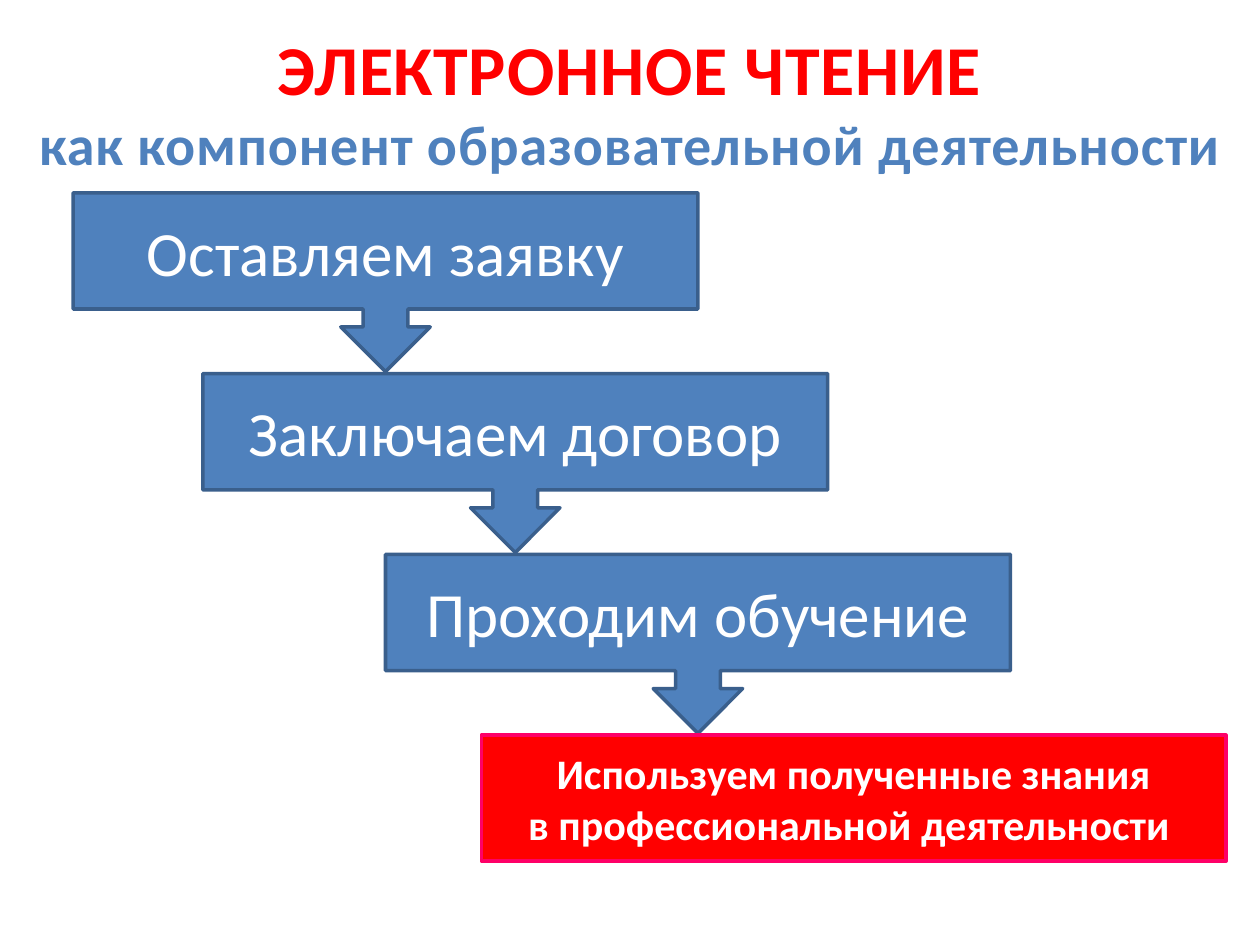
from dataclasses import dataclass

from pptx import Presentation
from pptx.dml.color import RGBColor
from pptx.enum.shapes import MSO_SHAPE
from pptx.enum.text import MSO_ANCHOR, MSO_AUTO_SIZE, PP_ALIGN
from pptx.util import Inches, Pt


@dataclass(frozen=True)
class Theme:
    font: str = "Calibri"
    red: str = "FF0000"
    blue: str = "4F81BD"
    outline: str = "3A5F8C"
    pink: str = "FE0067"
    white: str = "FFFFFF"
    title_size: int = 40
    subtitle_size: int = 32
    step_size: int = 36
    result_size: int = 24
    line_width: int = 2
    title_spacing: int = 50  # hundredths of a point


@dataclass(frozen=True)
class Block:
    """A filled shape with centred text; lengths are in inches."""
    lines: tuple[str, ...]
    left: float
    top: float
    width: float
    height: float
    kind: MSO_SHAPE
    fill: str
    outline: str
    size: int
    bold: bool = False


THEME = Theme()
SLIDE_WIDTH, SLIDE_HEIGHT = 10, 7.5

# Staircase: equal rows, each step shifted to the right
STEPS = (
    ("Оставляем заявку", 0.58),
    ("Заключаем договор", 1.61),
    ("Проходим обучение", 3.06),
)
FIRST_ROW, ROW_PITCH = 1.53, 1.435
STEP_WIDTH, STEP_HEIGHT = 4.96, 1.42


def format_para(para, size: int, color: str, bold: bool) -> None:
    para.alignment = PP_ALIGN.CENTER
    for span in para.runs:
        span.font.name = THEME.font
        span.font.size = Pt(size)
        span.font.bold = bold
        span.font.color.rgb = RGBColor.from_string(color)


def fill_title(page) -> None:
    title = page.shapes.title
    margin = 0.12
    title.left, title.top = Inches(margin), Inches(0.15)
    title.width, title.height = Inches(SLIDE_WIDTH - 2 * margin), Inches(1.31)
    frame = title.text_frame
    frame.text = "ЭЛЕКТРОННОЕ ЧТЕНИЕ\nкак компонент образовательной деятельности"
    frame.word_wrap = True
    frame.auto_size = MSO_AUTO_SIZE.SHAPE_TO_FIT_TEXT
    frame.vertical_anchor = MSO_ANCHOR.TOP
    styles = ((THEME.title_size, THEME.red), (THEME.subtitle_size, THEME.blue))
    for para, (size, color) in zip(frame.paragraphs, styles):
        format_para(para, size, color, True)
        for span in para.runs:
            span.font._element.set("spc", str(THEME.title_spacing))


def draw_block(page, block: Block) -> None:
    shape = page.shapes.add_shape(
        block.kind, Inches(block.left), Inches(block.top),
        Inches(block.width), Inches(block.height))
    shape.shadow.inherit = False
    shape.fill.solid()
    shape.fill.fore_color.rgb = RGBColor.from_string(block.fill)
    shape.line.color.rgb = RGBColor.from_string(block.outline)
    shape.line.width = Pt(THEME.line_width)
    frame = shape.text_frame
    frame.text = "\n".join(block.lines)
    frame.word_wrap = True
    frame.vertical_anchor = MSO_ANCHOR.MIDDLE
    for para in frame.paragraphs:
        format_para(para, block.size, THEME.white, block.bold)


def main() -> None:
    deck = Presentation()
    deck.slide_width, deck.slide_height = Inches(SLIDE_WIDTH), Inches(SLIDE_HEIGHT)
    page = deck.slides.add_slide(deck.slide_layouts.get_by_name("Title Only"))
    fill_title(page)

    # Steps with arrows leading down
    for row, (label, left) in enumerate(STEPS):
        draw_block(page, Block(
            (label,), left, FIRST_ROW + row * ROW_PITCH, STEP_WIDTH, STEP_HEIGHT,
            MSO_SHAPE.DOWN_ARROW_CALLOUT, THEME.blue, THEME.outline, THEME.step_size))

    # Result at the foot of the staircase
    draw_block(page, Block(
        ("Используем полученные знания", "в профессиональной деятельности "),
        3.82, FIRST_ROW + len(STEPS) * ROW_PITCH, 5.91, 1,
        MSO_SHAPE.RECTANGLE, THEME.red, THEME.pink, THEME.result_size, bold=True))

    deck.save("out.pptx")


if __name__ == "__main__":
    main()
